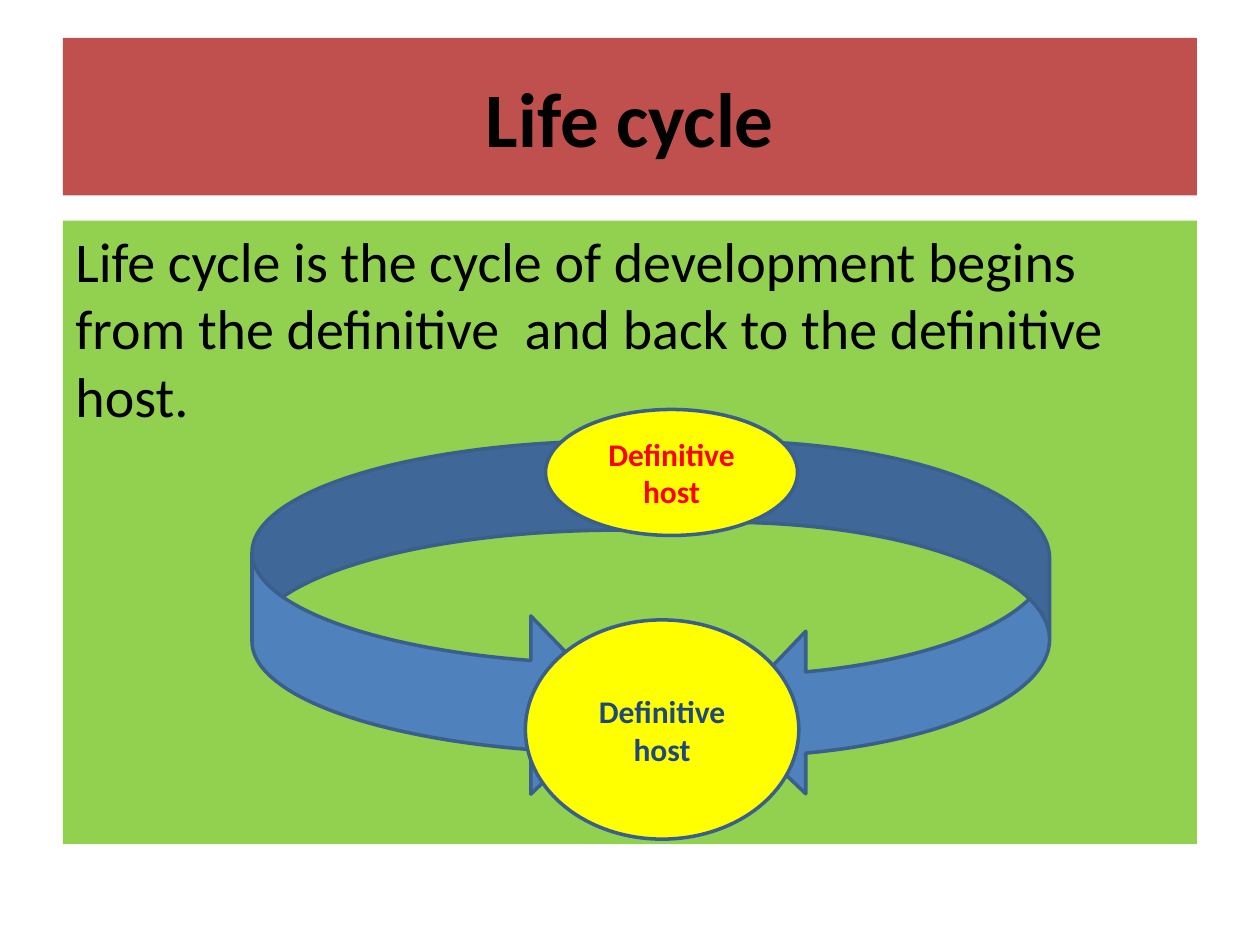
from pptx import Presentation
from pptx.dml.color import RGBColor
from pptx.enum import shapes, text
from pptx.util import Inches, Pt

RED = RGBColor(0xC0, 0x50, 0x4D)
GREEN = RGBColor(0x92, 0xD0, 0x50)
BLUE = RGBColor(0x4F, 0x81, 0xBD)
OUTLINE = RGBColor(0x3A, 0x5F, 0x8C)
YELLOW = RGBColor(0xFF, 0xFF, 0x00)
BRIGHT_RED = RGBColor(0xFF, 0x00, 0x00)
NAVY = RGBColor(0x1F, 0x49, 0x7D)
BLACK = RGBColor(0x00, 0x00, 0x00)

MSO = shapes.MSO_SHAPE
MIDDLE, TOP = text.MSO_ANCHOR.MIDDLE, text.MSO_ANCHOR.TOP
CENTER, LEFT = text.PP_ALIGN.CENTER, text.PP_ALIGN.LEFT

prs = Presentation()
prs.slide_width, prs.slide_height = Inches(10), Inches(7.5)
s = prs.slides.add_slide(prs.slide_layouts[6])


def add_shape(kind, box, fill, line=None):
    sp = s.shapes.add_shape(kind, *[Inches(v) for v in box])
    sp.shadow.inherit = False
    sp.fill.solid()
    sp.fill.fore_color.rgb = fill
    if line is None:
        sp.line.fill.background()
    else:
        sp.line.color.rgb = line
        sp.line.width = Pt(2)
    return sp


def set_text(sp, words, size, color, bold=True, align=CENTER, anchor=MIDDLE):
    tf = sp.text_frame
    tf.word_wrap = True
    tf.vertical_anchor = anchor
    p = tf.paragraphs[0]
    p.text = words
    p.alignment = align
    p.font.name = "Calibri"
    p.font.size = Pt(size)
    p.font.bold = bold
    p.font.color.rgb = color


# Title band
sp = add_shape(MSO.RECTANGLE, (0.5, 0.3, 9, 1.25), RED)
set_text(sp, "Life cycle", 44, BLACK)

# Definition panel
sp = add_shape(MSO.RECTANGLE, (0.5, 1.75, 9, 4.95), GREEN)
set_text(sp, "Life cycle is the cycle of development begins from the definitive  "
         "and back to the definitive host.", 32, BLACK, False, LEFT, TOP)

# Cycle arrows
add_shape(MSO.CURVED_LEFT_ARROW, (5.75, 3.5, 2.58, 2.83), BLUE, OUTLINE)
add_shape(MSO.CURVED_RIGHT_ARROW, (2, 3.5, 2.92, 2.83), BLUE, OUTLINE)

# Start and end hosts
for box, color in [((4.33, 3.25, 2, 1), BRIGHT_RED),
                   ((4.17, 4.92, 2.17, 1.74), NAVY)]:
    sp = add_shape(MSO.OVAL, box, YELLOW, OUTLINE)
    set_text(sp, "Definitive host", 18, color)

prs.save("out.pptx")
